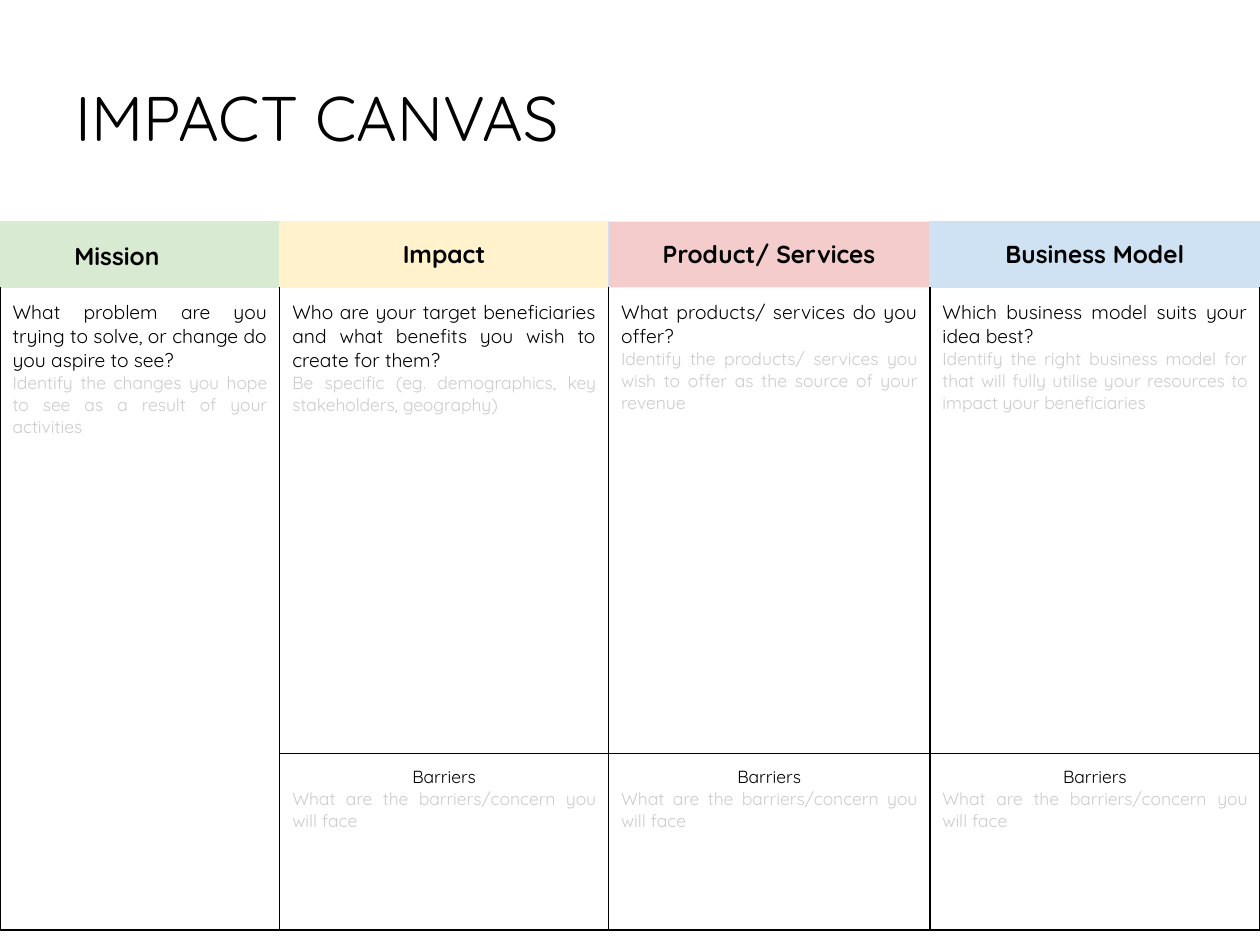
from dataclasses import dataclass

from lxml import etree
from pptx import Presentation
from pptx.dml.color import RGBColor
from pptx.enum.text import MSO_ANCHOR, MSO_AUTO_SIZE, PP_ALIGN
from pptx.oxml.ns import qn
from pptx.table import _Cell
from pptx.text.text import TextFrame
from pptx.util import Inches, Pt

LEFT, CENTER, JUSTIFY = PP_ALIGN.LEFT, PP_ALIGN.CENTER, PP_ALIGN.JUSTIFY
TOP, MIDDLE = MSO_ANCHOR.TOP, MSO_ANCHOR.MIDDLE
NO_FIT = MSO_AUTO_SIZE.NONE


@dataclass(frozen=True)
class Theme:
    font: str = "Quicksand"
    ink: str = "000000"
    hint: str = "CCCCCC"
    paper: str = "FFFFFF"
    green: str = "D9EAD3"
    cream: str = "FFF2CC"
    pink: str = "F4CCCC"
    blue: str = "CFE2F3"
    title: int = 36
    head: int = 14
    ask: int = 11
    note: int = 10


T = Theme()


@dataclass(frozen=True)
class Column:
    name: str
    width: float
    fill: str
    edges: tuple[str, str, str, str]  # left, right, top, bottom
    ask: str
    hint: str
    barriers: bool = True


COLUMNS = (
    Column("Mission", 2.22, T.green, (T.green, T.cream, T.green, T.green),
           "What problem are you trying to solve, or change do you aspire to see?",
           "Identify the changes you hope to see as a result of your activities",
           barriers=False),
    Column("Impact", 2.61, T.cream, (T.cream, T.blue, T.cream, T.cream),
           "Who are your target beneficiaries and what benefits you wish to "
           "create for them?",
           "Be specific (eg. demographics, key stakeholders, geography)"),
    Column("Product/ Services", 2.55, T.pink, (T.blue, T.blue, T.cream, T.cream),
           "What products/ services do you offer?",
           "Identify the products/ services you wish to offer as the source of "
           "your revenue"),
    Column("Business Model", 2.62, T.blue, (T.blue,) * 4,
           "Which business model suits your idea best?",
           "Identify the right business model for that will fully utilise your "
           "resources to impact your beneficiaries"),
)
ROWS = (0.52, 3.7, 1.4)


def write(frame: TextFrame, text: str, *, size: int, color: str = T.ink,
          bold: bool = False, align: PP_ALIGN = LEFT, more: bool = False,
          indent: float = 0, lead: float = 1) -> None:
    """Write one paragraph; more=True adds it below the last one."""
    para = frame.add_paragraph() if more else frame.paragraphs[0]
    para.alignment, para.line_spacing = align, lead
    if indent:
        para._p.get_or_add_pPr().set("marL", str(Inches(indent)))
    run = para.add_run()
    run.text = text
    font = run.font
    font.name, font.size, font.bold = T.font, Pt(size), bold
    font.color.rgb = RGBColor.from_string(color)


def dress(cell: _Cell, fill: str, edges: tuple[str, str, str, str],
          anchor: MSO_ANCHOR, width: float) -> None:
    """Set borders, fill, margins and anchor of a cell."""
    props = cell._tc.get_or_add_tcPr()
    for side, color in zip("LRTB", edges):
        # Pale edges are thinner than the black grid
        weight = width if color == T.ink else 0.75
        line = etree.SubElement(props, qn(f"a:ln{side}"), w=str(Pt(weight)))
        solid = etree.SubElement(line, qn("a:solidFill"))
        etree.SubElement(solid, qn("a:srgbClr"), val=color)
    cell.fill.solid()
    cell.fill.fore_color.rgb = RGBColor.from_string(fill)
    cell.margin_left = cell.margin_right = Inches(0.1)
    cell.margin_top = cell.margin_bottom = Inches(0.1)
    cell.vertical_anchor = anchor


def main() -> None:
    deck = Presentation()
    deck.slide_width, deck.slide_height = Inches(10), Inches(7.5)
    slide = deck.slides.add_slide(deck.slide_layouts[5])

    # Title
    title = slide.shapes.title
    title.left, title.top = Inches(0.5), Inches(0.3)
    title.width, title.height = Inches(8.07), Inches(1.25)
    frame = title.text_frame
    frame.auto_size, frame.vertical_anchor = NO_FIT, MIDDLE
    write(frame, "IMPACT CANVAS", size=T.title)

    # Canvas grid
    grid = slide.shapes.add_table(len(ROWS), len(COLUMNS), 0, Inches(1.76),
                                  Inches(10), Inches(sum(ROWS))).table
    grid.first_row = grid.horz_banding = False
    for row, height in zip(grid.rows, ROWS):
        row.height = Inches(height)

    for i, col in enumerate(COLUMNS):
        grid.columns[i].width = Inches(col.width)
        head, body, foot = (grid.cell(r, i) for r in range(len(ROWS)))
        dress(head, col.fill, col.edges, MIDDLE, 1)
        dress(body, T.paper, (T.ink, T.ink, col.edges[3], T.ink), TOP, 1)
        dress(foot, T.paper, (T.ink,) * 4, TOP, 1)

        # Heading: the first one is indented, the others are centred
        style = {"align": CENTER} if i else {"indent": 0.49, "lead": 1.15}
        write(head.text_frame, col.name, size=T.head, bold=True, **style)

        # Question and hint
        write(body.text_frame, col.ask, size=T.ask, align=JUSTIFY)
        write(body.text_frame, col.hint, size=T.note, color=T.hint,
              align=JUSTIFY, more=True)

        # Barriers, or one tall cell
        if col.barriers:
            write(foot.text_frame, "Barriers", size=T.note, align=CENTER)
            write(foot.text_frame, "What are the barriers/concern you will face",
                  size=T.note, color=T.hint, align=JUSTIFY, more=True)
        else:
            body.merge(foot)

    deck.save("out.pptx")


if __name__ == "__main__":
    main()
